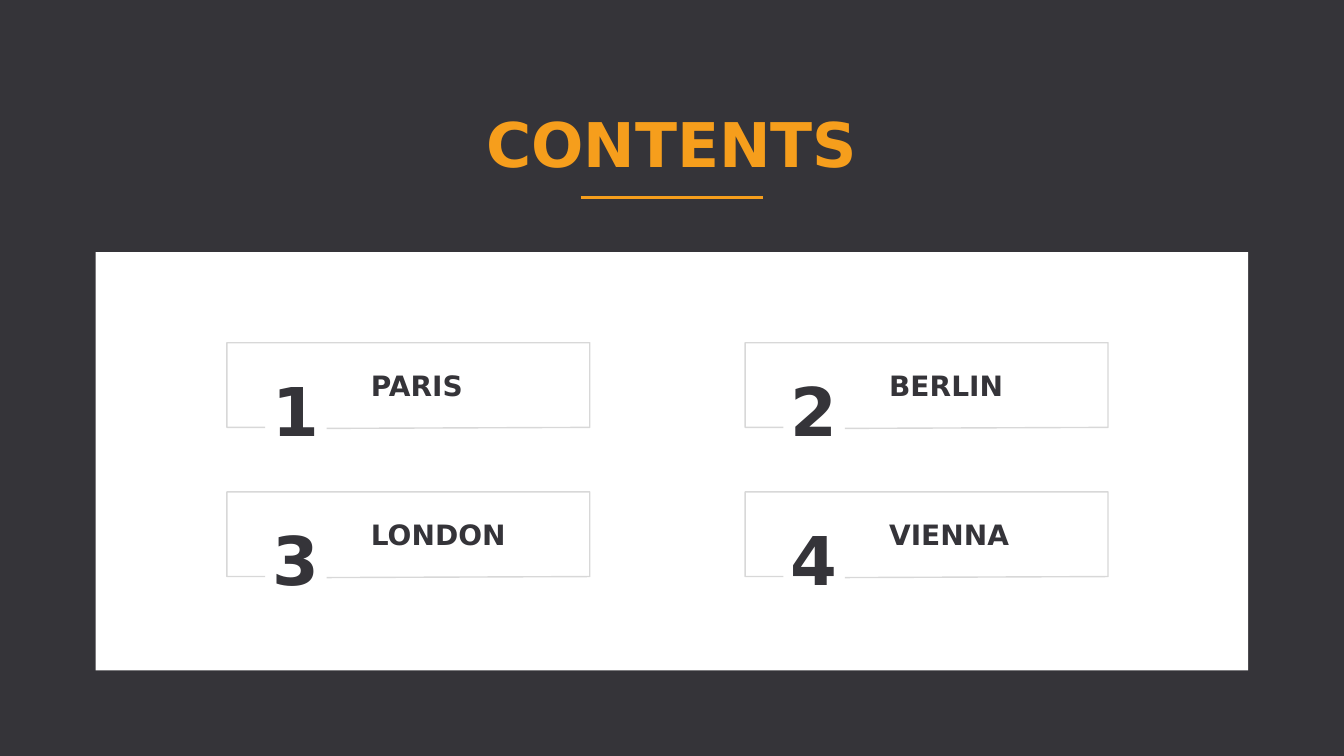
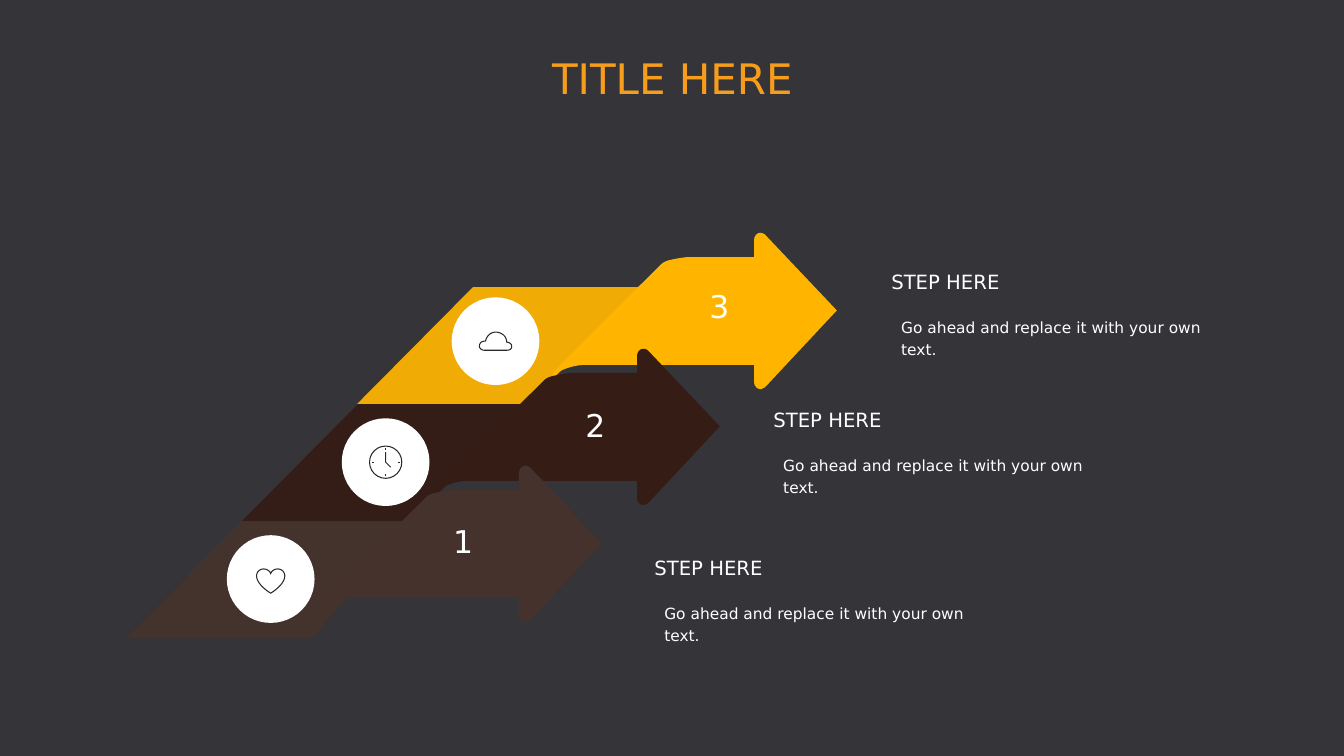
from dataclasses import dataclass

import pptx
import pptx.dml.color
import pptx.enum.shapes
import pptx.enum.text
import pptx.oxml.ns
import pptx.util
from lxml import etree

Inches = pptx.util.Inches
Pt = pptx.util.Pt
SHAPE = pptx.enum.shapes.MSO_SHAPE
ALIGN = pptx.enum.text.PP_ALIGN
ANCHOR = pptx.enum.text.MSO_ANCHOR
qn = pptx.oxml.ns.qn


@dataclass(frozen=True)
class Theme:
    font: str = "DejaVu Sans"
    background: str = "353439"
    accent: str = "F69E1C"
    white: str = "FFFFFF"
    border: str = "D8D8D8"
    icon: str = "282828"
    first: str = "46322D"
    second: str = "351C15"
    third: str = "FFB500"
    contents_size: float = 44
    title_size: float = 30
    card_number_size: float = 48
    card_label_size: float = 20
    step_number_size: float = 22.4
    heading_size: float = 14
    body_size: float = 11


THEME = Theme()

# Outlines in inches: pairs are straight segments, six numbers a cubic curve.
CARD_OUTLINE = [(0.38, 0.84), (0, 0.84), (0, 0), (3.6, 0), (3.6, 0.84), (0.99, 0.85)]
ARROW_OUTLINE = [
    (2.1, 1.55), (2.12, 1.55, 2.13, 1.54, 2.15, 1.53), (2.86, 0.77), (2.15, 0.02),
    (2.14, 0.01, 2.12, 0, 2.1, 0), (2.07, 0, 2.04, 0.03, 2.04, 0.07),
    (2.04, 0.24), (1.41, 0.24), (1.36, 0.24, 1.3, 0.25, 1.25, 0.26),
    (1.2, 0.27, 1.15, 0.28, 1.12, 0.31), (1.11, 0.32, 0.11, 1.31, 0.07, 1.36),
    (0.03, 1.41, 0.01, 1.48, 0, 1.53), (0.03, 1.45, 0.07, 1.4, 0.14, 1.36),
    (0.21, 1.33, 0.29, 1.31, 0.37, 1.31), (2.04, 1.31), (2.04, 1.48),
    (2.04, 1.52, 2.07, 1.55, 2.1, 1.55),
]
BAND_TOP = [(2.84, 0), (1.15, 0), (0, 1.16)]
BAND_ENDS = {
    "first": [(1.85, 1.16)],
    "second": [(1.67, 1.16)],
    "third": [(1.73, 1.16), (1.86, 1, 2, 0.85, 2.14, 0.7),
              (2.36, 0.45, 2.6, 0.22, 2.84, 0)],
}
HEART_OUTLINE = [
    (0, 0.12), (-0.02, 0.11, -0.14, 0.03, -0.14, -0.05),
    (-0.14, -0.09, -0.11, -0.12, -0.07, -0.12), (-0.03, -0.12, 0, -0.09, 0, -0.07),
    (0, -0.09, 0.03, -0.12, 0.07, -0.12), (0.11, -0.12, 0.14, -0.09, 0.14, -0.05),
    (0.14, 0.03, 0.02, 0.11, 0, 0.12),
]
CLOUD_OUTLINE = [
    (0.11, 0.09), (-0.11, 0.09), (-0.14, 0.09, -0.16, 0.07, -0.16, 0.05),
    (-0.16, 0.02, -0.14, 0, -0.11, 0), (-0.1, 0), (-0.09, -0.05, -0.05, -0.09, 0, -0.09),
    (0.06, -0.09, 0.11, -0.05, 0.11, 0.01), (0.14, 0.01, 0.16, 0.03, 0.16, 0.05),
    (0.16, 0.08, 0.14, 0.09, 0.11, 0.09),
]


def color(value):
    return pptx.dml.color.RGBColor.from_string(value)


def paint(shape, fill=None, line=None, width=0.75, opacity=100):
    shape.shadow.inherit = False
    if fill:
        shape.fill.solid()
        shape.fill.fore_color.rgb = color(fill)
        if opacity < 100:
            fill_color = shape.fill._xPr.find(".//" + qn("a:srgbClr"))
            etree.SubElement(fill_color, qn("a:alpha"), val=str(opacity * 1000))
    else:
        shape.fill.background()
    if line:
        shape.line.color.rgb = color(line)
        shape.line.width = Pt(width)
    else:
        shape.line.fill.background()
    return shape


def add_preset(slide, kind, left, top, width, height, **look):
    shape = slide.shapes.add_shape(
        kind, Inches(left), Inches(top), Inches(width), Inches(height))
    return paint(shape, **look)


def flatten(outline, steps=10):
    """Turn line and cubic segments into a list of points."""
    points = [outline[0]]
    for segment in outline[1:]:
        if len(segment) == 2:
            points.append(segment)
            continue
        x0, y0 = points[-1]
        x1, y1, x2, y2, x3, y3 = segment
        for step in range(1, steps + 1):
            t = step / steps
            weights = ((1 - t) ** 3, 3 * t * (1 - t) ** 2, 3 * t * t * (1 - t), t ** 3)
            points.append(tuple(sum(w * v for w, v in zip(weights, values))
                                for values in ((x0, x1, x2, x3), (y0, y1, y2, y3))))
    return points


def add_outline(slide, outline, left, top, close=True, **look):
    points = [(Inches(left + x), Inches(top + y)) for x, y in flatten(outline)]
    builder = slide.shapes.build_freeform(*points[0])
    builder.add_line_segments(points[1:], close=close)
    return paint(builder.convert_to_shape(), **look)


def add_line(slide, start, end, line, width):
    connector = slide.shapes.add_connector(
        pptx.enum.shapes.MSO_CONNECTOR.STRAIGHT,
        *(Inches(value) for value in (*start, *end)))
    connector.line.color.rgb = color(line)
    connector.line.width = Pt(width)
    etree.SubElement(connector._element.spPr, qn("a:effectLst"))


def add_text(slide, text, left, top, width, height, *, size, fill=THEME.white,
             bold=False, align=ALIGN.LEFT, anchor=ANCHOR.MIDDLE, spacing=1.0,
             insets=(0.1, 0.05), grow=False):
    box = slide.shapes.add_textbox(
        Inches(left), Inches(top), Inches(width), Inches(height))
    frame = box.text_frame
    frame.word_wrap = True
    frame.vertical_anchor = anchor
    if grow:
        frame.auto_size = pptx.enum.text.MSO_AUTO_SIZE.SHAPE_TO_FIT_TEXT
    frame.margin_left = frame.margin_right = Inches(insets[0])
    frame.margin_top = frame.margin_bottom = Inches(insets[1])
    paragraph = frame.paragraphs[0]
    paragraph.alignment = align
    paragraph.line_spacing = spacing
    run = paragraph.add_run()
    run.text = text
    run.font.name = THEME.font
    run.font.size = Pt(size)
    run.font.bold = bold
    run.font.color.rgb = color(fill)


def add_title(slide, text, left, top, width, height, **text_format):
    add_text(slide, text, left, top, width, height, fill=THEME.accent,
             align=ALIGN.CENTER, **text_format)


def add_card(slide, number, label, left, top):
    add_outline(slide, CARD_OUTLINE, left, top, close=False, line=THEME.border, width=1)
    add_text(slide, str(number), left + 0.26, top + 0.21, 0.85, 0.91,
             size=THEME.card_number_size, fill=THEME.background, bold=True,
             align=ALIGN.CENTER, anchor=ANCHOR.TOP, grow=True)
    add_text(slide, label, left + 1.33, top + 0.08, 2.05, 0.69,
             size=THEME.card_label_size, fill=THEME.background, bold=True)


def build_contents(slide):
    add_preset(slide, SHAPE.RECTANGLE, 0.95, 2.5, 11.43, 4.15, fill=THEME.white)
    add_title(slide, "CONTENTS", 4.25, 1.08, 4.83, 0.71, size=THEME.contents_size,
              bold=True, anchor=ANCHOR.TOP, spacing=0.9)
    add_line(slide, (5.76, 1.96), (7.57, 1.96), THEME.accent, 2)
    for index, city in enumerate(("PARIS", "BERLIN", "LONDON", "VIENNA")):
        row, column = divmod(index, 2)
        add_card(slide, index + 1, city, 2.25 + 5.14 * column, 3.4 + 1.48 * row)


def add_heart(slide, x, y):
    add_outline(slide, HEART_OUTLINE, x, y + 0.02, line=THEME.icon)


def add_cloud(slide, x, y):
    add_outline(slide, CLOUD_OUTLINE, x, y, line=THEME.icon)


def add_clock(slide, x, y):
    add_preset(slide, SHAPE.OVAL, x - 0.16, y - 0.16, 0.32, 0.32, line=THEME.icon)
    add_outline(slide, [(0, -0.1), (0, 0), (0.05, 0.05)], x, y, close=False,
                line=THEME.icon)
    for dx, dy in ((0, -1), (1, 0), (0, 1), (-1, 0)):
        add_line(slide, (x + 0.12 * dx, y + 0.12 * dy),
                 (x + 0.14 * dx, y + 0.14 * dy), THEME.icon, 0.75)


@dataclass(frozen=True)
class Step:
    number: int
    name: str
    band: tuple
    arrow: tuple
    number_at: tuple
    badge: tuple
    text: tuple
    add_icon: object


STEPS = (
    Step(3, "third", (3.54, 2.85), (5.44, 2.31), (6.87, 2.88), (4.48, 2.95),
         (8.84, 2.63), add_cloud),
    Step(2, "second", (2.4, 4.01), (4.28, 3.46), (5.64, 4.06), (3.39, 4.15),
         (7.67, 4), add_clock),
    Step(1, "first", (1.25, 5.17), (3.11, 4.62), (4.33, 5.21), (2.25, 5.31),
         (6.49, 5.47), add_heart),
)


def add_step_arrow(slide, step):
    fill = getattr(THEME, step.name)
    add_outline(slide, BAND_TOP + BAND_ENDS[step.name], *step.band, fill=fill, opacity=93)
    add_outline(slide, ARROW_OUTLINE, *step.arrow, fill=fill)


def add_step_details(slide, step):
    add_text(slide, str(step.number), *step.number_at, 0.53, 0.38,
             size=THEME.step_number_size, align=ALIGN.CENTER, spacing=0.8,
             insets=(0.03, 0.03))
    left, top = step.badge
    diameter = 0.87
    add_preset(slide, SHAPE.OVAL, left, top, diameter, diameter, fill=THEME.white)
    step.add_icon(slide, left + diameter / 2, top + diameter / 2)
    left, top = step.text
    add_text(slide, "Go ahead and replace it with your own text.", left, top + 0.38,
             3.24, 0.65, size=THEME.body_size, spacing=1.2)
    add_text(slide, "STEP HERE", left, top, 1.21, 0.3, size=THEME.heading_size,
             anchor=ANCHOR.TOP, spacing=1.2, insets=(0, 0))


def build_steps(slide):
    add_title(slide, "TITLE HERE", 5.1, 0.24, 3.14, 1.06, size=THEME.title_size)
    for add_part in (add_step_arrow, add_step_details):
        for step in STEPS:
            add_part(slide, step)


def main():
    presentation = pptx.Presentation()
    presentation.slide_width = Inches(13.33)
    presentation.slide_height = Inches(7.5)
    background = presentation.slide_master.background.fill
    background.solid()
    background.fore_color.rgb = color(THEME.background)
    for build in (build_contents, build_steps):
        build(presentation.slides.add_slide(presentation.slide_layouts[6]))
    presentation.save("out.pptx")


if __name__ == "__main__":
    main()
